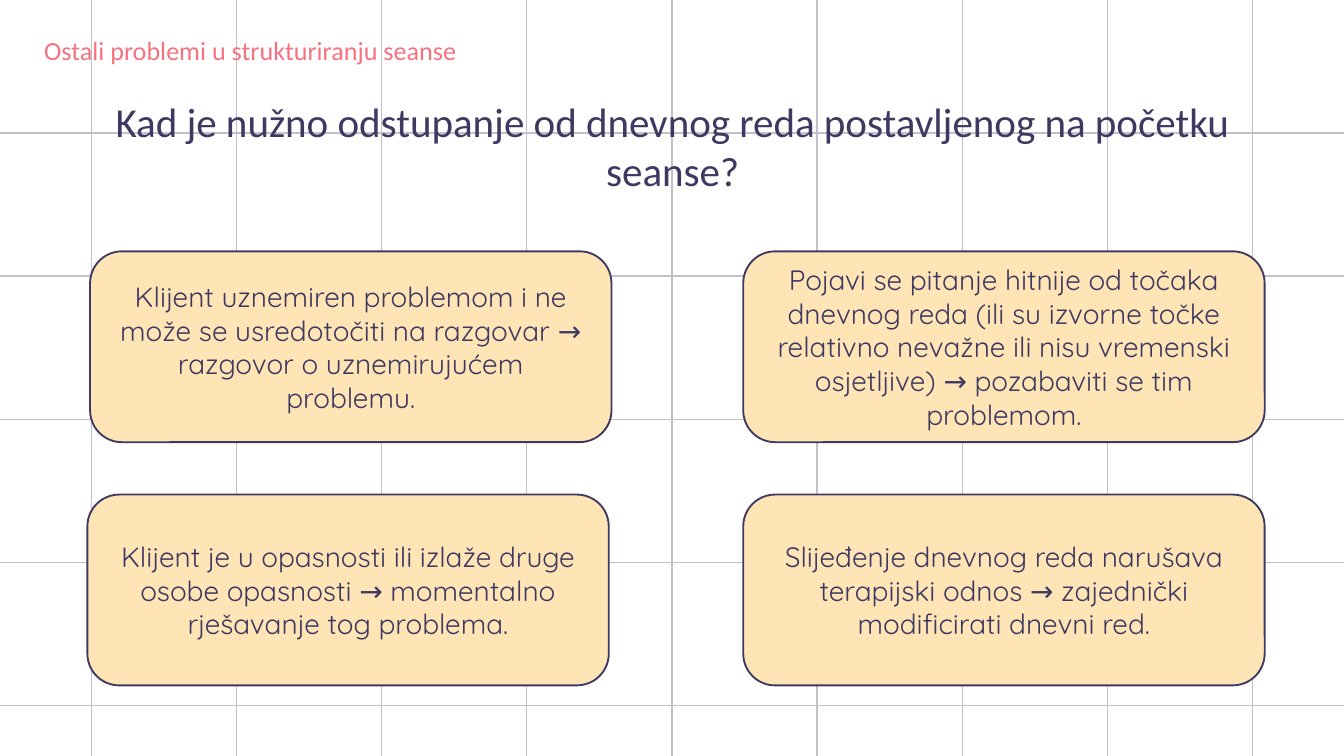
from lxml import etree
from pptx import Presentation
from pptx.dml.color import RGBColor
from pptx.enum.shapes import MSO_CONNECTOR, MSO_SHAPE
from pptx.enum.text import MSO_ANCHOR, PP_ALIGN
from pptx.oxml.ns import qn
from pptx.util import Inches, Pt

STRAIGHT = MSO_CONNECTOR.STRAIGHT
ROUNDED_RECTANGLE = MSO_SHAPE.ROUNDED_RECTANGLE
MIDDLE = MSO_ANCHOR.MIDDLE
TOP = MSO_ANCHOR.TOP
CENTER = PP_ALIGN.CENTER
LEFT = PP_ALIGN.LEFT

NAVY = "3D3961"
CORAL = "F67280"
CREAM = "FFE4B5"
GRID_GRAY = "C2C1CB"

CARD_WIDTH, CARD_HEIGHT = 3.88, 1.42
CARDS = [
    (0.67, 1.87, "Klijent uznemiren problemom i ne može se usredotočiti na razgovar → "
                 "razgovor o uznemirujućem problemu."),
    (5.53, 1.87, "Pojavi se pitanje hitnije od točaka dnevnog reda (ili su izvorne točke "
                 "relativno nevažne ili nisu vremenski osjetljive) → pozabaviti se tim problemom."),
    (0.65, 3.68, "Klijent je u opasnosti ili izlaže druge osobe opasnosti → "
                 "momentalno rješavanje tog problema."),
    (5.53, 3.68, "Slijeđenje dnevnog reda narušava terapijski odnos → "
                 "zajednički modificirati dnevni red."),
]


def color(value):
    """Turn a hex string into a colour."""
    return RGBColor.from_string(value)


def add_line(slide, start_x, start_y, end_x, end_y):
    """Draw one thin grid line."""
    line = slide.shapes.add_connector(
        STRAIGHT, Inches(start_x), Inches(start_y), Inches(end_x), Inches(end_y))
    line.line.color.rgb = color(GRID_GRAY)
    line.line.width = Pt(0.75)
    etree.SubElement(line._element.spPr, qn("a:effectLst"))


def add_grid(slide, left, top, width, height):
    """Draw the background grid across the given box."""
    for column in range(9):
        x = left + 0.86 + 1.08 * column
        add_line(slide, x, top, x, top + height)
    for row in range(5):
        y = top + 1.19 + 4.26 * row / 4
        add_line(slide, left, y, left + width, y)


def write_text(shape, text, font_name, size, hex_color, alignment, anchor, margins, wrap=True):
    """Fill a shape with one formatted paragraph."""
    frame = shape.text_frame
    frame.word_wrap = wrap
    frame.vertical_anchor = anchor
    frame.margin_left = frame.margin_right = Inches(margins[0])
    frame.margin_top = frame.margin_bottom = Inches(margins[1])
    paragraph = frame.paragraphs[0]
    paragraph.alignment = alignment
    run = paragraph.add_run()
    run.text = text
    run.font.name = font_name
    run.font.size = Pt(size)
    run.font.color.rgb = color(hex_color)


def add_section_label(slide, left, top, width, height):
    """Place the section label above the title."""
    label = slide.shapes.add_textbox(Inches(left), Inches(top), Inches(width), Inches(height))
    write_text(label, "Ostali problemi u strukturiranju seanse", "Calibri", 14, CORAL,
               LEFT, TOP, (0.1, 0.05), wrap=False)


def add_title(slide, left, top, width, height):
    """Place the centred slide title."""
    title = slide.shapes.add_textbox(Inches(left), Inches(top), Inches(width), Inches(height))
    write_text(title, "Kad je nužno odstupanje od dnevnog reda postavljenog na početku seanse?",
               "Calibri", 22, NAVY, CENTER, MIDDLE, (0, 0))


def add_card(slide, left, top, width, height, text):
    """Place one rounded card with centred text."""
    card = slide.shapes.add_shape(
        ROUNDED_RECTANGLE, Inches(left), Inches(top), Inches(width), Inches(height))
    card.shadow.inherit = False
    card.fill.solid()
    card.fill.fore_color.rgb = color(CREAM)
    card.line.color.rgb = color(NAVY)
    card.line.width = Pt(1)
    write_text(card, text, "Quicksand", 15, NAVY, CENTER, MIDDLE, (0.1, 0.1))


def main():
    """Build and save the presentation."""
    presentation = Presentation()
    presentation.slide_width = Inches(10)
    presentation.slide_height = Inches(10) * 9 // 16
    slide = presentation.slides.add_slide(presentation.slide_layouts[6])
    add_grid(slide, -0.18, -0.2, 10.36, 5.97)
    add_title(slide, 0.79, 0.77, 8.43, 0.63)
    add_section_label(slide, 0.23, 0.21, 3.4, 0.34)
    for left, top, text in CARDS:
        add_card(slide, left, top, CARD_WIDTH, CARD_HEIGHT, text)
    presentation.save("out.pptx")


if __name__ == "__main__":
    main()
